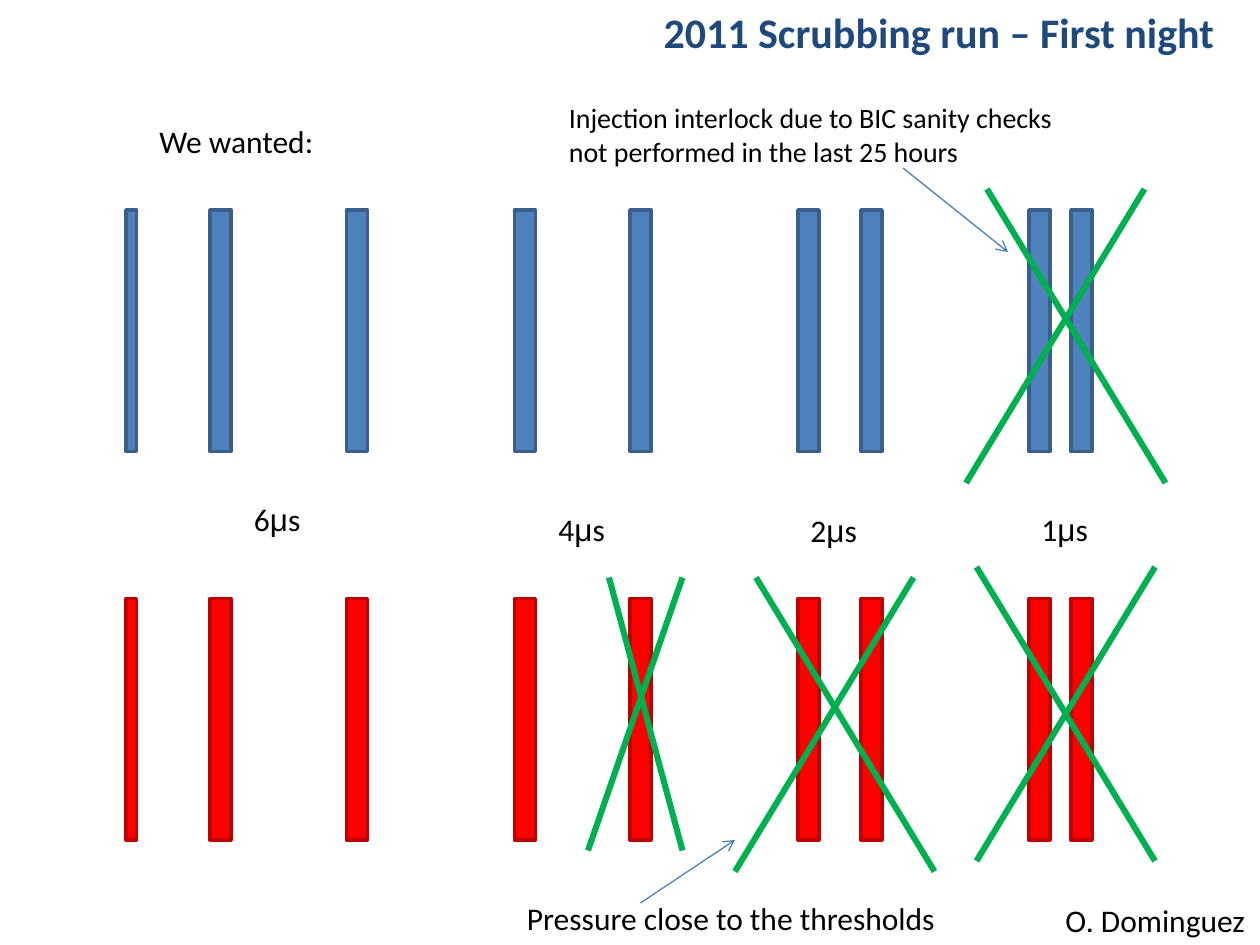
"""Build the slide on the first night of the 2011 scrubbing run."""
from typing import NamedTuple

from lxml import etree
from pptx import Presentation, util as u
from pptx.dml.color import RGBColor
from pptx.enum import shapes, text
from pptx.oxml.ns import qn

SLIDE_WIDTH, SLIDE_HEIGHT = u.Inches(10), u.Inches(7.5)
COLUMNS, ROWS = 120, 90
BAR_HEIGHT = 23
BUNCHES = [(12, 1)] + [(column, 2) for column in (20, 33, 49, 60, 76, 82, 98, 102)]


class Beam(NamedTuple):
    row: float
    fill: str
    outline: str


class Label(NamedTuple):
    words: str
    column: float
    row: float
    width: float
    height: float = 4.8
    size: float = 18
    wrap: bool = True


class Cross(NamedTuple):
    top: float
    bottom: float
    falling: tuple[float, float]
    rising: tuple[float, float]


class Pointer(NamedTuple):
    start: tuple[float, float]
    end: tuple[float, float]


class Failure(NamedTuple):
    crosses: list[Cross]
    reason: Label
    pointer: Pointer


BEAMS = [Beam(20, "4F81BD", "3A5F8C"), Beam(57, "FF0000", "C00000")]
SPACINGS = [
    Label("6μs", 23, 47, 8),
    Label("4μs", 52, 48, 8),
    Label("2μs", 76, 48.1, 8),
    Label("1μs", 98, 48, 8),
]
FAILURES = [
    Failure(
        [Cross(18, 46, (94, 111), (92, 109))],
        Label("Injection interlock due to BIC sanity checks not performed in the last 25 hours",
              53, 9, 52, 7.7, 16),
        Pointer((86, 16), (96, 24)),
    ),
    Failure(
        [Cross(54, 82, (93, 110), (93, 110)),
         Cross(55, 83, (72, 89), (70, 87)),
         Cross(55, 81, (58, 65), (56, 65))],
        Label("Pressure close to the thresholds", 49, 85, 56),
        Pointer((61, 86), (70, 80)),
    ),
]
REMARKS = [
    Label("We wanted:", 14, 11, 18),
    Label("O. Dominguez", 100.3, 85.2, 19.7, wrap=False),
]


def colour(code: str) -> RGBColor:
    """Turn a hex string into a colour."""
    return RGBColor.from_string(code)


def across(columns: float) -> int:
    """Convert grid columns to a length."""
    return round(SLIDE_WIDTH * columns / COLUMNS)


def down(rows: float) -> int:
    """Convert grid rows to a length."""
    return round(SLIDE_HEIGHT * rows / ROWS)


def draw_title(slide, words: str) -> None:
    """Place and format the title placeholder."""
    title = slide.shapes.title
    title.left, title.top, title.width, title.height = across(62), down(0), across(56), down(6)
    frame = title.text_frame
    frame.text = words
    frame.auto_size = text.MSO_AUTO_SIZE.NONE
    frame.vertical_anchor = text.MSO_ANCHOR.TOP
    frame.paragraphs[0].alignment = text.PP_ALIGN.LEFT
    font = frame.paragraphs[0].runs[0].font
    font.name, font.size, font.bold = "Calibri", u.Pt(24), True
    font.color.rgb = colour("1F497D")


def draw_label(canvas, label: Label) -> None:
    """Write a label, with the Greek letter in its own font."""
    box = canvas.add_textbox(across(label.column), down(label.row),
                             across(label.width), down(label.height))
    box.text_frame.word_wrap = label.wrap
    paragraph = box.text_frame.paragraphs[0]
    before, greek, after = label.words.partition("μ")
    for part, family in ((before, "Calibri"), (greek, "Arial"), (after, "Calibri")):
        if part:
            run = paragraph.add_run()
            run.text = part
            run.font.name, run.font.size = family, u.Pt(label.size)
            run.font.color.rgb = colour("000000")


def draw_beam(canvas, beam: Beam) -> None:
    """Draw one beam as a row of bunch bars."""
    for column, width in BUNCHES:
        bar = canvas.add_shape(shapes.MSO_SHAPE.RECTANGLE, across(column), down(beam.row),
                               across(width), down(BAR_HEIGHT))
        bar.shadow.inherit = False
        bar.fill.solid()
        bar.fill.fore_color.rgb = colour(beam.fill)
        bar.line.color.rgb = colour(beam.outline)
        bar.line.width = u.Pt(2)


def draw_line(canvas, start: tuple[float, float], end: tuple[float, float],
              code: str, weight: float):
    """Draw a straight line between two grid points."""
    stroke = canvas.add_connector(shapes.MSO_CONNECTOR.STRAIGHT, across(start[0]), down(start[1]),
                                  across(end[0]), down(end[1]))
    stroke.line.color.rgb = colour(code)
    stroke.line.width = u.Pt(weight)
    etree.SubElement(stroke.element.spPr, qn("a:effectLst"))
    return stroke


def draw_cross(canvas, cross: Cross) -> None:
    """Cross out the bunches that were not reached."""
    (left, right), (low, high) = cross.falling, cross.rising
    draw_line(canvas, (left, cross.top), (right, cross.bottom), "00B050", 3.5)
    draw_line(canvas, (low, cross.bottom), (high, cross.top), "00B050", 3.5)


def draw_pointer(canvas, pointer: Pointer) -> None:
    """Draw a thin line that ends in an open arrowhead."""
    stroke = draw_line(canvas, pointer.start, pointer.end, "4B7EBC", 0.75)
    etree.SubElement(stroke.line._get_or_add_ln(), qn("a:tailEnd"), type="arrow")


def draw_failure(canvas, failure: Failure) -> None:
    """Draw the crosses, their reason and its pointer."""
    for cross in failure.crosses:
        draw_cross(canvas, cross)
    draw_label(canvas, failure.reason)
    draw_pointer(canvas, failure.pointer)


def main() -> None:
    """Build and save the slide."""
    deck = Presentation()
    deck.slide_width, deck.slide_height = SLIDE_WIDTH, SLIDE_HEIGHT
    slide = deck.slides.add_slide(deck.slide_layouts.get_by_name("Title Only"))
    draw_title(slide, "2011 Scrubbing run – First night")
    for beam in BEAMS:
        draw_beam(slide.shapes.add_group_shape().shapes, beam)
    for spacing in SPACINGS:
        draw_label(slide.shapes, spacing)
    for failure in FAILURES:
        draw_failure(slide.shapes.add_group_shape().shapes, failure)
    for remark in REMARKS:
        draw_label(slide.shapes, remark)
    deck.save("out.pptx")


if __name__ == "__main__":
    main()
